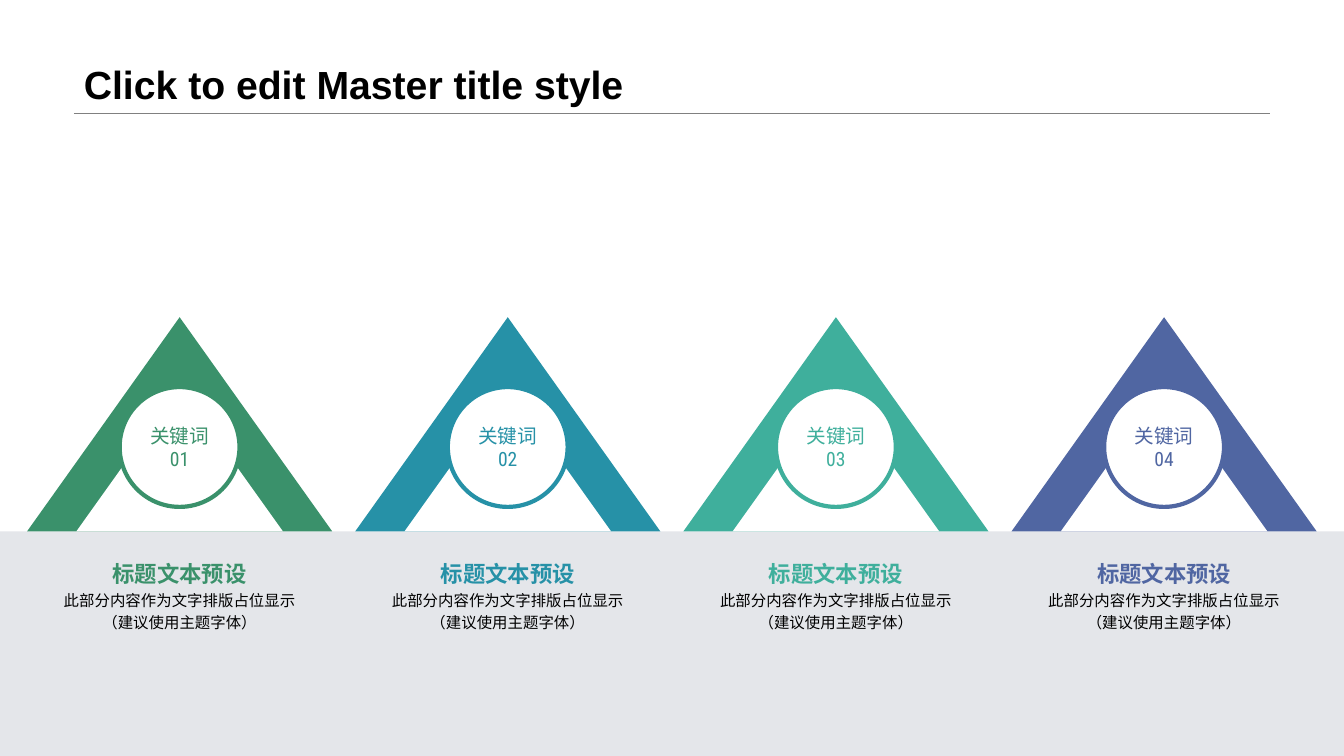
from copy import deepcopy

from pptx import Presentation
from pptx.dml.color import RGBColor
from pptx.enum.shapes import MSO_CONNECTOR as CONN, MSO_SHAPE as SHAPE
from pptx.enum.text import MSO_ANCHOR as ANCHOR, PP_ALIGN as ALIGN
from pptx.oxml.ns import qn
from pptx.util import Pt

# Content
TITLE = "Click to edit Master title style"
BODY = "此部分内容作为文字排版占位显示\n（建议使用主题字体）"
ITEMS = [
    # keyword, heading, body, colour
    ("关键词\n01", "标题文本预设", BODY, "3A916B"),
    ("关键词\n02", "标题文本预设", BODY, "2691A7"),
    ("关键词\n03", "标题文本预设", BODY, "3FAF9C"),
    ("关键词\n04", "标题文本预设", BODY, "5066A2"),
]

THEME = {
    "white": "FFFFFF", "text": "000000", "band": "E4E6EA", "rule": "808080",
    "font": "Arial", "badge_font": "Roboto Condensed",
    "title": 28, "heading": 16, "badge": 14, "body": 11,
}

# Geometry in points
W, H = 960, 540
BAND_TOP = 379.6
FIRST_CENTRE, PITCH = 128.3, 234.4
PEAK_W, PEAK_H = 218, 153
GAP_W, GAP_H = 147.6, 103.4
BADGE = 85.6
BADGE_TOP = 276.5
TEXT_W = 198

prs = Presentation()
prs.slide_width, prs.slide_height = Pt(W), Pt(H)
s = prs.slides.add_slide(prs.slide_layouts[6])


def add_block(kind, x, y, w, h, fill, line=None):
    sp = s.shapes.add_shape(kind, Pt(x), Pt(y), Pt(w), Pt(h))
    sp.shadow.inherit = False
    sp.fill.solid()
    sp.fill.fore_color.rgb = RGBColor.from_string(fill)
    if line:
        sp.line.color.rgb = RGBColor.from_string(line)
        sp.line.width = Pt(3)
    else:
        sp.line.fill.background()
    return sp


def add_box(x, y, w, h):
    return s.shapes.add_textbox(Pt(x), Pt(y), Pt(w), Pt(h))


def write(sp, text, *, size, color=THEME["text"], font=THEME["font"], bold=False,
          align=ALIGN.CENTER, anchor=ANCHOR.TOP, wrap=True, spacing=None,
          inset=(7.2, 3.6)):
    tf = sp.text_frame
    tf.word_wrap, tf.vertical_anchor = wrap, anchor
    tf.margin_left = tf.margin_right = Pt(inset[0])
    tf.margin_top = tf.margin_bottom = Pt(inset[1])
    p = tf.paragraphs[0]
    p.text = text
    p.alignment, p.line_spacing = align, spacing
    for r in p.runs:
        r.font.name, r.font.size, r.font.bold = font, Pt(size), bold
        r.font.color.rgb = RGBColor.from_string(color)
    # Line breaks take the same type size as the runs
    for br in p._p.findall(qn("a:br")):
        br.append(deepcopy(p._p.find(qn("a:r")).find(qn("a:rPr"))))


# Title and rule
rule = s.shapes.add_connector(CONN.STRAIGHT, Pt(52.8), Pt(81), Pt(907.2), Pt(81))
rule.line.color.rgb = RGBColor.from_string(THEME["rule"])
rule.line.width = Pt(0.25)
rule._element.spPr.append(rule._element.makeelement(qn("a:effectLst"), {}))
write(add_box(52.8, 0, 854.4, 81), TITLE, size=THEME["title"], bold=True,
      align=ALIGN.LEFT, anchor=ANCHOR.BOTTOM, spacing=0.9)

# Ground band
add_block(SHAPE.RECTANGLE, 0, BAND_TOP, W, H - BAND_TOP, THEME["band"])

# Peaks with a badge above and text below
for i, (keyword, heading, body, color) in enumerate(ITEMS):
    cx = FIRST_CENTRE + i * PITCH
    for w, h, fill in ((PEAK_W, PEAK_H, color), (GAP_W, GAP_H, THEME["white"])):
        add_block(SHAPE.ISOSCELES_TRIANGLE, cx - w / 2, BAND_TOP - h, w, h, fill)
    badge = add_block(SHAPE.OVAL, cx - BADGE / 2, BADGE_TOP, BADGE, BADGE,
                      THEME["white"], line=color)
    write(badge, keyword, size=THEME["badge"], color=color,
          font=THEME["badge_font"], anchor=ANCHOR.MIDDLE, wrap=False)

    left = cx - TEXT_W / 2
    write(add_box(left, 419.8, TEXT_W, 100.8), body, size=THEME["body"],
          spacing=1.2, inset=(6, 0))
    write(add_box(left, 400.3, TEXT_W, 19.4), heading, size=THEME["heading"],
          color=color, bold=True, wrap=False, inset=(6, 0))

prs.save("out.pptx")
